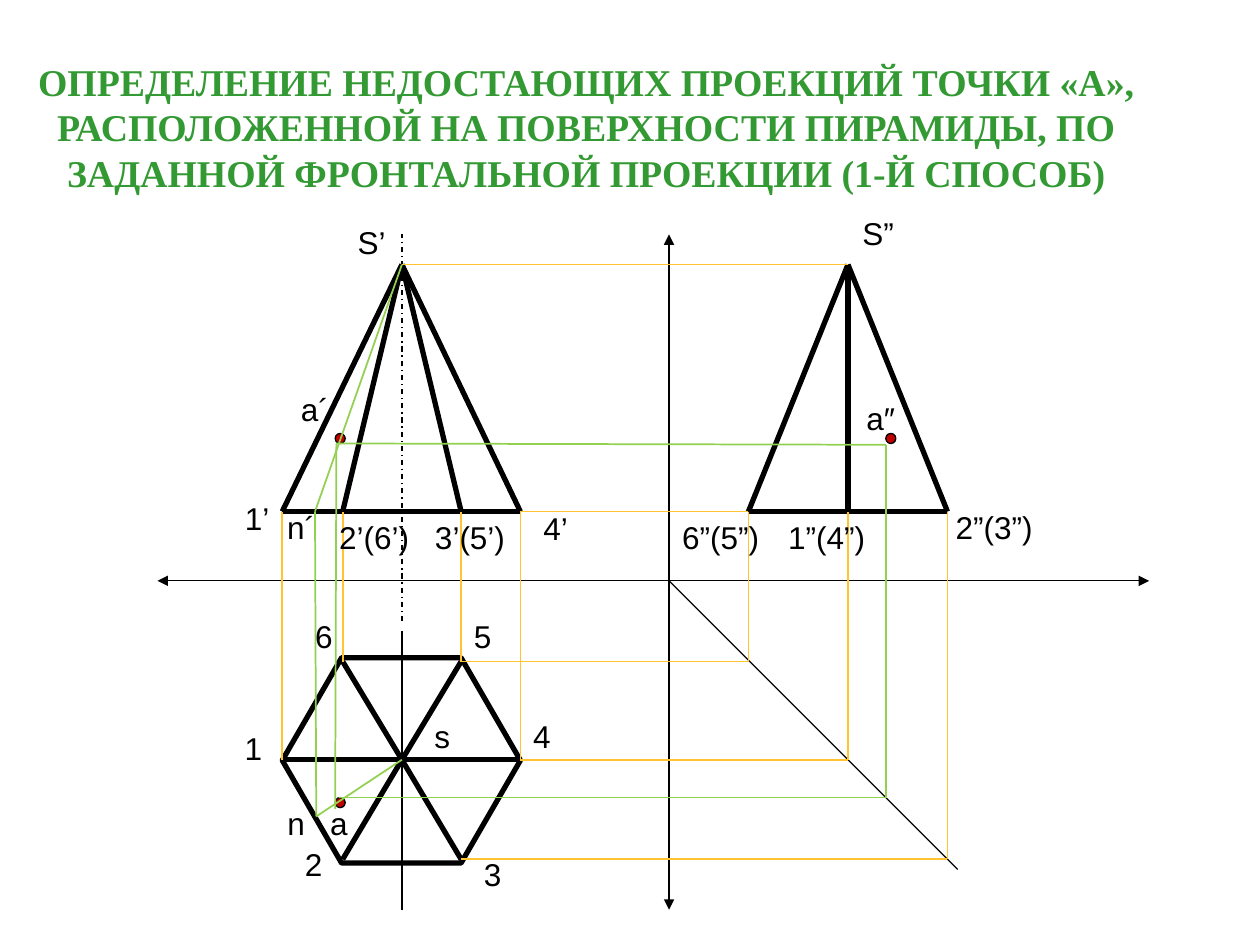
from dataclasses import dataclass
from itertools import pairwise

from lxml import etree
from pptx import Presentation
from pptx.dml.color import RGBColor
from pptx.enum.dml import MSO_LINE
from pptx.enum.shapes import MSO_CONNECTOR, MSO_SHAPE
from pptx.enum.text import MSO_ANCHOR, MSO_AUTO_SIZE, PP_ALIGN
from pptx.oxml.ns import qn
from pptx.util import Inches, Pt

STRAIGHT = MSO_CONNECTOR.STRAIGHT
HEXAGON = MSO_SHAPE.HEXAGON
DOT = MSO_SHAPE.FLOWCHART_CONNECTOR
DASH_DOT = MSO_LINE.DASH_DOT
CENTER = PP_ALIGN.CENTER
MIDDLE = MSO_ANCHOR.MIDDLE
NO_AUTOFIT = MSO_AUTO_SIZE.NONE


@dataclass(frozen=True)
class Theme:
    title_color: RGBColor = RGBColor(0x33, 0x99, 0x33)
    ink: RGBColor = RGBColor(0, 0, 0)
    projection: RGBColor = RGBColor(0xFF, 0xC4, 0x2F)
    solution: RGBColor = RGBColor(0x92, 0xD0, 0x50)
    point: RGBColor = RGBColor(0xC0, 0, 0)
    title_font: str = "Times New Roman"
    label_font: str = "Arial"
    title_size: float = 21.6
    label_size: float = 18
    thin: float = 0.75
    colored: float = 1
    thick: float = 3


THEME = Theme()

TITLE = ("ОПРЕДЕЛЕНИЕ НЕДОСТАЮЩИХ ПРОЕКЦИЙ ТОЧКИ «А», РАСПОЛОЖЕННОЙ "
         "НА ПОВЕРХНОСТИ ПИРАМИДЫ, ПО ЗАДАННОЙ ФРОНТАЛЬНОЙ ПРОЕКЦИИ (1-Й СПОСОБ)")

# Columns and rows shared by the three views
X1, X2, X_AXIS, X3, X4 = 2.24, 2.72, 3.19, 3.66, 4.13
SIDE_BACK, SIDE_MID, SIDE_FRONT = 5.94, 6.73, 7.52
APEX_Y, BASE_Y = 2.1, 4.06
BACK_Y, MID_Y, FRONT_Y = 5.25, 6.03, 6.82
ORIGIN_X, ORIGIN_Y = 5.31, 4.61

FRONT_APEX = (X_AXIS, APEX_Y)
SIDE_APEX = (SIDE_MID, APEX_Y)
PLAN_CENTER = (X_AXIS, MID_Y)
PLAN_CORNERS = [(X1, MID_Y), (X2, FRONT_Y), (X3, FRONT_Y),
                (X4, MID_Y), (X3, BACK_Y), (X2, BACK_Y)]

# Text, horizontal centre, top
LABELS = [
    ("1", 2.01, 5.74), ("2", 2.49, 6.66), ("3", 3.91, 6.74),
    ("4", 4.3, 5.64), ("5", 3.83, 4.85), ("6", 2.57, 4.85), ("s", 3.51, 5.64),
    ("S’", 2.95, 1.72), ("1’", 2.04, 3.91), ("2’(6’)", 2.97, 4.06),
    ("3’(5’)", 3.73, 4.06), ("4’", 4.41, 3.99),
    ("S”", 6.97, 1.65), ("6”(5”)", 5.72, 4.06), ("1”(4”)", 6.56, 4.06),
    ("2”(3”)", 7.89, 3.98),
    ("а´", 2.5, 3.05), ("а″", 6.99, 3.12), ("а", 2.69, 6.33),
    ("n´", 2.39, 3.98), ("n", 2.35, 6.33),
]
POINTS = [(2.7, 3.48), (7.07, 3.48), (2.7, 6.37)]


def add_title(slide):
    title = slide.shapes.title
    title.left, title.top = Inches(0), Inches(0.28)
    title.width, title.height = Inches(9.31), Inches(1.45)
    frame = title.text_frame
    frame.text = TITLE
    frame.word_wrap = True
    frame.auto_size = NO_AUTOFIT
    frame.vertical_anchor = MIDDLE
    paragraph = frame.paragraphs[0]
    paragraph.alignment = CENTER
    paragraph.line_spacing = 1.0
    font = paragraph.runs[0].font
    font.name, font.size, font.bold = THEME.title_font, Pt(THEME.title_size), True
    font.color.rgb = THEME.title_color


def add_line(slide, start, end, color=THEME.ink, width=THEME.thin, arrows=False):
    connector = slide.shapes.add_connector(
        STRAIGHT, *(Inches(value) for value in (*start, *end)))
    connector.line.color.rgb = color
    connector.line.width = Pt(width)
    properties = connector._element.spPr
    if arrows:
        outline = connector.line._get_or_add_ln()
        for tag in ("a:headEnd", "a:tailEnd"):
            etree.SubElement(outline, qn(tag), type="triangle")
    etree.SubElement(properties, qn("a:effectLst"))
    return connector


def add_path(slide, *corners, color):
    for start, end in pairwise(corners):
        add_line(slide, start, end, color, THEME.colored)


def add_edge(slide, start, end):
    add_line(slide, start, end, width=THEME.thick)


def add_outlined(slide, preset, left, top, width, height, weight):
    shape = slide.shapes.add_shape(
        preset, *(Inches(value) for value in (left, top, width, height)))
    shape.shadow.inherit = False
    shape.fill.background()
    shape.line.color.rgb = THEME.ink
    shape.line.width = Pt(weight)
    return shape


def add_point(slide, x, y, size=0.08):
    point = add_outlined(slide, DOT, x - size / 2, y - size / 2, size, size, THEME.thin)
    point.fill.solid()
    point.fill.fore_color.rgb = THEME.point


def add_label(slide, text, center, top):
    width = 0.3 + 0.12 * len(text)
    box = slide.shapes.add_textbox(
        Inches(center - width / 2), Inches(top), Inches(width), Inches(0.4))
    frame = box.text_frame
    frame.word_wrap = False
    frame.text = text
    paragraph = frame.paragraphs[0]
    paragraph.alignment = CENTER
    font = paragraph.runs[0].font
    font.name, font.size = THEME.label_font, Pt(THEME.label_size)
    font.color.rgb = THEME.ink


def draw_axes(slide):
    add_line(slide, (1.25, ORIGIN_Y), (9.12, ORIGIN_Y), arrows=True)
    add_line(slide, (ORIGIN_X, 1.86), (ORIGIN_X, 7.22), arrows=True)
    add_line(slide, (ORIGIN_X, ORIGIN_Y), (7.6, 6.9))
    add_line(slide, (X_AXIS, 5.01), (X_AXIS, 7.22))
    symmetry_axis = add_line(slide, (X_AXIS, 4.93), (X_AXIS, 1.86))
    symmetry_axis.line.dash_style = DASH_DOT


def draw_pyramid(slide):
    """Draw the plan, front and side views of the hexagonal pyramid."""
    plan = add_outlined(slide, HEXAGON, X1, 5.22, X4 - X1, 1.63, THEME.thick)
    plan.adjustments[0], plan.adjustments[1] = 0.289, 1.155
    for corner in PLAN_CORNERS:
        add_edge(slide, corner, PLAN_CENTER)
    for apex, columns in ((FRONT_APEX, (X1, X2, X3, X4)),
                          (SIDE_APEX, (SIDE_BACK, SIDE_MID, SIDE_FRONT))):
        add_edge(slide, (columns[0], BASE_Y), (columns[-1], BASE_Y))
        for x in columns:
            add_edge(slide, (x, BASE_Y), apex)


def draw_projection_lines(slide):
    for x, y in ((X1, MID_Y), (X2, BACK_Y), (X3, BACK_Y), (X4, MID_Y)):
        add_path(slide, (x, y), (x, BASE_Y), color=THEME.projection)
    for start_x, end_x, y in ((X3, SIDE_BACK, BACK_Y), (X4, SIDE_MID, MID_Y),
                              (X3, SIDE_FRONT, FRONT_Y)):
        add_path(slide, (start_x, y), (end_x, y), (end_x, BASE_Y),
                 color=THEME.projection)
    add_path(slide, (X4, BASE_Y), (SIDE_BACK, BASE_Y), color=THEME.projection)
    add_path(slide, FRONT_APEX, SIDE_APEX, color=THEME.projection)


def draw_solution(slide):
    """Trace the auxiliary line through the point and its projections."""
    for x, y in POINTS:
        add_point(slide, x, y)
    add_path(slide, FRONT_APEX, (2.5, BASE_Y), (2.51, 6.48), PLAN_CENTER,
             color=THEME.solution)
    add_path(slide, (2.66, 6.42), (2.67, 3.52), (7.03, 3.53), (7.03, 6.33),
             (2.69, 6.33), color=THEME.solution)


def main():
    presentation = Presentation()
    presentation.slide_width, presentation.slide_height = Inches(10), Inches(7.5)
    slide = presentation.slides.add_slide(presentation.slide_layouts[5])
    add_title(slide)
    draw_axes(slide)
    draw_pyramid(slide)
    draw_projection_lines(slide)
    draw_solution(slide)
    for text, center, top in LABELS:
        add_label(slide, text, center, top)
    presentation.save("out.pptx")


if __name__ == "__main__":
    main()
